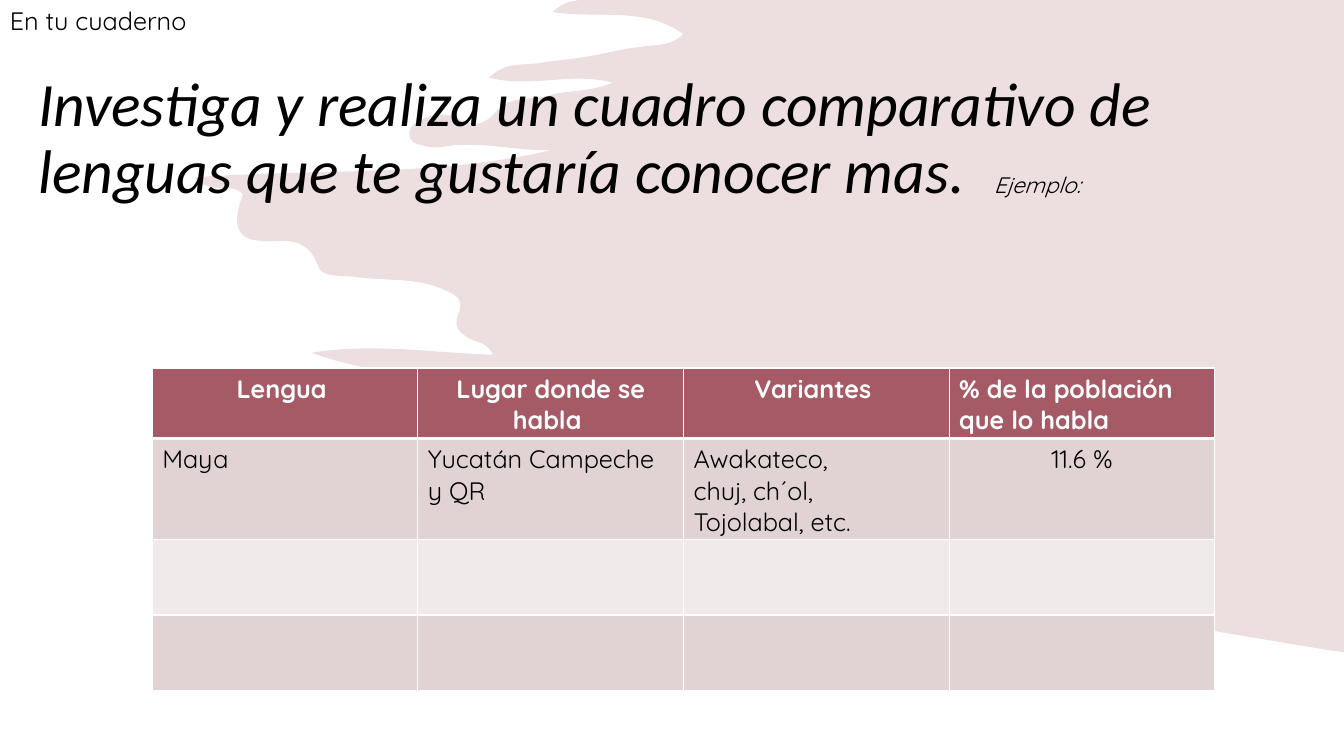
from lxml.etree import Element, SubElement
from pptx import Presentation
from pptx.dml.color import RGBColor
from pptx.enum.text import PP_ALIGN as Align
from pptx.oxml.ns import qn
from pptx.util import Inches, Pt

# Content
SLIDE_W, SLIDE_H = 13.33, 7.5
COLORS = {"ink": "000000", "white": "FFFFFF", "rose": "A55A66",
          "band": "E1D2D3", "pale": "F0EAEA"}
BODY_FONT, TITLE_FONT = "Quicksand", "Calibri"
CORNER_NOTE = "En tu cuaderno"
TASK = "Investiga y realiza un cuadro comparativo de lenguas que te gustaría conocer mas.  "
TASK_HINT = "Ejemplo:"
HEADER = ["Lengua ", "Lugar donde se habla ", "Variantes ",
          "% de la población que lo habla"]
LANGUAGES = [
    ["Maya", "Yucatán Campeche y QR", "Awakateco,\vchuj, ch´ol,\nTojolabal, etc.", "11.6 %"],
    [""] * 4,
    [""] * 4,
]
HEADER_ALIGN = [Align.CENTER, Align.CENTER, Align.CENTER, Align.LEFT]
BODY_ALIGN = [Align.LEFT, Align.LEFT, Align.LEFT, Align.CENTER]
TABLE_LEFT, TABLE_TOP, TABLE_W, TABLE_H = 1.51, 3.65, 10.54, 3.2
HEADER_H, BODY_H = 0.52, 0.75  # rows grow with their text

# Brush stain: start of the ragged edge, then two control points and an end per curve
STAIN_START = (5.75, 0)
STAIN_CURVES = [
    (5.67, 0.01, 5.57, 0.03, 5.48, 0.12), (5.95, 0.19, 6.39, 0.06, 6.78, 0.34),
    (6.64, 0.47, 6.48, 0.44, 6.32, 0.47), (6.16, 0.49, 6, 0.53, 5.84, 0.56),
    (5.67, 0.59, 5.49, 0.6, 5.32, 0.63), (5.18, 0.65, 5.02, 0.61, 4.85, 0.77),
    (5.27, 0.88, 5.66, 0.71, 6.08, 0.82), (5.84, 0.92, 5.63, 0.89, 5.44, 0.95),
    (5.27, 1, 5.06, 0.94, 4.92, 1.11), (4.81, 1.24, 4.69, 1.26, 4.55, 1.18),
    (4.42, 1.11, 4.28, 1.13, 4.15, 1.2), (4.11, 1.23, 4.06, 1.26, 4.06, 1.32),
    (4.06, 1.41, 4.12, 1.43, 4.18, 1.44), (4.24, 1.46, 4.31, 1.47, 4.37, 1.46),
    (4.74, 1.39, 5.1, 1.5, 5.47, 1.49), (4.31, 1.76, 3.14, 1.67, 1.93, 1.76),
    (2.09, 1.95, 2.29, 1.79, 2.41, 1.93), (2.3, 2.22, 2.34, 2.37, 2.58, 2.39),
    (2.8, 2.41, 3.04, 2.31, 3.16, 2.65), (3.2, 2.76, 3.41, 2.73, 3.55, 2.75),
    (3.84, 2.79, 4.14, 2.75, 4.42, 2.88), (4.53, 2.93, 4.6, 2.97, 4.55, 3.11),
    (4.49, 3.25, 4.56, 3.3, 4.66, 3.36), (4.73, 3.4, 4.83, 3.39, 4.89, 3.52),
    (4.28, 3.5, 3.69, 3.4, 3.09, 3.5), (3.75, 3.74, 4.47, 3.73, 5.12, 4.02),
    (5.1, 4.12, 4.95, 4.07, 4.94, 4.22), (5.28, 4.38, 5.69, 4.27, 6.05, 4.5),
    (5.84, 4.61, 5.65, 4.44, 5.45, 4.54), (5.52, 4.69, 8.4, 5.61, 8.92, 5.71),
    (9.78, 5.87, 11.95, 6.25, 13.18, 6.45),
]
STAIN_CORNERS = [(SLIDE_W, 6.47), (SLIDE_W, 0)]
UNITS = 100  # outline units per inch


def rgb(name):
    return RGBColor.from_string(COLORS[name])


def write(paragraph, text, size=18, font=BODY_FONT, color="ink",
          bold=False, italic=False, align=Align.LEFT):
    """Append text to a paragraph; a vertical tab is a line break."""
    paragraph.alignment = align
    for index, line in enumerate(text.split("\v")):
        if index:
            paragraph.add_line_break()
        run = paragraph.add_run()
        run.text = line
        run.font.size, run.font.name = Pt(size), font
        run.font.bold, run.font.italic = bold, italic
        run.font.color.rgb = rgb(color)


def text_area(slide, left, top, width, height):
    frame = slide.shapes.add_textbox(*map(Inches, (left, top, width, height))).text_frame
    frame.word_wrap = True
    return frame.paragraphs[0]


def to_units(x, y):
    return round(x * UNITS), round(y * UNITS)


def add_stain(slide):
    ends = [curve[-2:] for curve in STAIN_CURVES] + STAIN_CORNERS
    builder = slide.shapes.build_freeform(*to_units(*STAIN_START), scale=Inches(1) / UNITS)
    builder.add_line_segments([to_units(*end) for end in ends], close=True)
    stain = builder.convert_to_shape()

    # Bend the straight segments of the ragged edge into curves
    left = min(x for x, _ in ends)
    segments = list(stain._element.iter(qn("a:lnTo")))
    for segment, (x1, y1, x2, y2, _, _) in zip(segments, STAIN_CURVES):
        segment.tag = qn("a:cubicBezTo")
        for index, (x, y) in enumerate([(x1, y1), (x2, y2)]):
            across, down = to_units(x - left, y)
            segment.insert(index, Element(qn("a:pt"), x=str(across), y=str(down)))

    stain.shadow.inherit = False
    stain.line.fill.background()
    stain.fill.solid()
    stain.fill.fore_color.rgb = rgb("rose")
    tint = stain._element.spPr.find(qn("a:solidFill"))[0]
    SubElement(tint, qn("a:alpha"), val="20000")


def set_borders(cell, **widths):
    for side, width in widths.items():
        line = SubElement(cell._tc.get_or_add_tcPr(), qn("a:ln" + side), w=str(Pt(width)))
        SubElement(SubElement(line, qn("a:solidFill")), qn("a:srgbClr"), val=COLORS["white"])


def add_languages_table(slide):
    rows = [HEADER] + LANGUAGES
    grid = slide.shapes.add_table(
        len(rows), len(HEADER),
        *map(Inches, (TABLE_LEFT, TABLE_TOP, TABLE_W, TABLE_H)))
    table = grid.table
    for r, row in enumerate(rows):
        is_header = r == 0
        table.rows[r].height = Inches(HEADER_H if is_header else BODY_H)
        fill = "rose" if is_header else ("band" if r % 2 else "pale")
        for c, text in enumerate(row):
            cell = table.cell(r, c)
            set_borders(cell, L=1, R=1, T=3 if r == 1 else 1, B=3 if is_header else 1)
            cell.fill.solid()
            cell.fill.fore_color.rgb = rgb(fill)
            for index, part in enumerate(text.split("\n") if text else []):
                frame = cell.text_frame
                paragraph = frame.add_paragraph() if index else frame.paragraphs[0]
                write(paragraph, part, bold=is_header,
                      color="white" if is_header else "ink",
                      align=(HEADER_ALIGN if is_header else BODY_ALIGN)[c])
    grid.height = Inches(TABLE_H)


def main():
    deck = Presentation()
    deck.slide_width, deck.slide_height = Inches(SLIDE_W), Inches(SLIDE_H)
    slide = deck.slides.add_slide(deck.slide_layouts[6])

    # Background and headings
    add_stain(slide)
    task = text_area(slide, 0.28, 0.68, 12.77, 2.07)
    task.line_spacing = 0.9
    write(task, TASK, size=44, font=TITLE_FONT, italic=True)
    write(task, TASK_HINT, size=16, italic=True)
    write(text_area(slide, 0, 0, 2.74, 0.4), CORNER_NOTE)

    # Comparison table
    add_languages_table(slide)
    deck.save("out.pptx")


if __name__ == "__main__":
    main()
